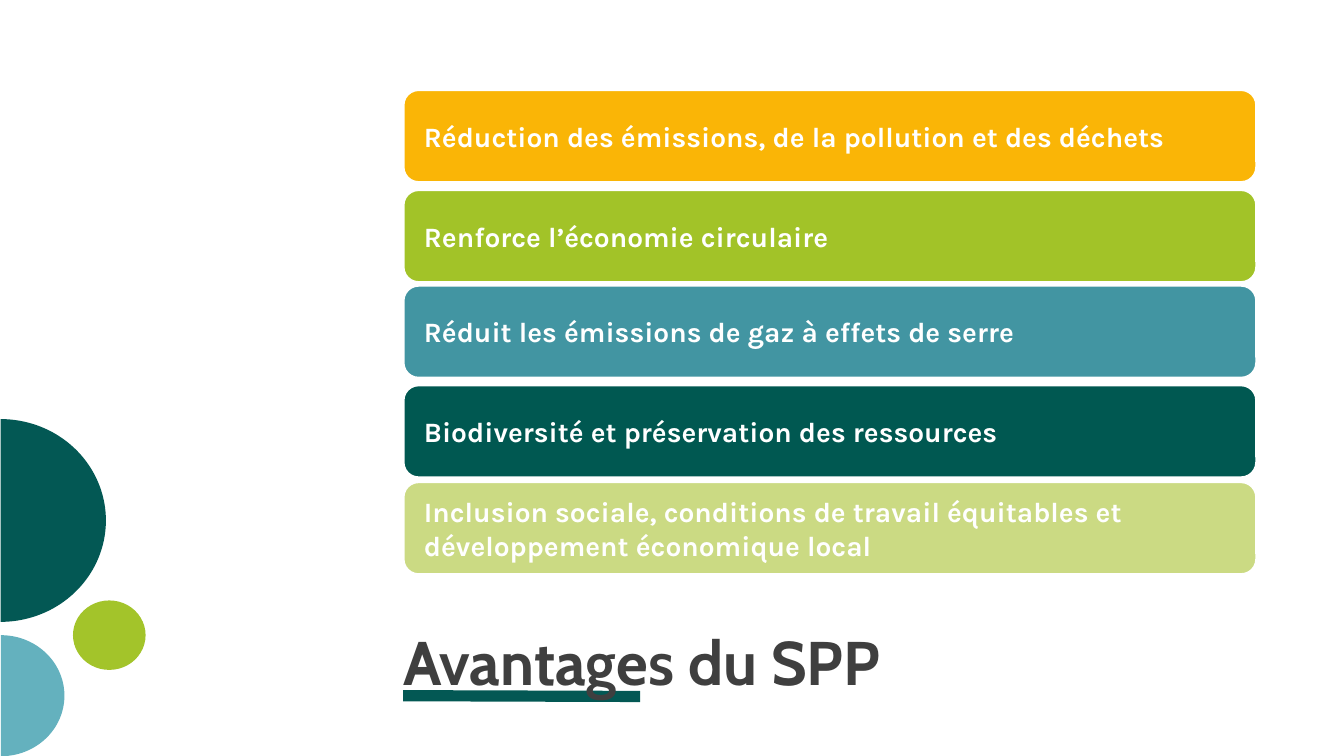
from lxml import etree
from pptx import Presentation
from pptx.dml.color import RGBColor
from pptx.enum.shapes import MSO_CONNECTOR, MSO_SHAPE as SHAPE
from pptx.enum.text import MSO_ANCHOR as ANCHOR, PP_ALIGN as ALIGN
from pptx.oxml.ns import qn
from pptx.util import Cm, Pt

TITLE = "Avantages du SPP"
# text, fill, top in cm
BENEFITS = [
    ("Réduction des émissions, de la pollution et des déchets", "FAB506", 2.26),
    ("Renforce l’économie circulaire", "A2C328", 4.78),
    ("Réduit les émissions de gaz à effets de serre", "4295A2", 7.19),
    ("Biodiversité et préservation des ressources", "005851", 9.7),
    ("Inclusion sociale, conditions de travail équitables et "
     "développement économique local", "CBDA83", 12.14),
]
# shape, fill, (left, top, width, height) in cm
CIRCLES = [
    (SHAPE.PIE, "035854", (-2.54, 10.46, 5.11, 5.31)),
    (SHAPE.PIE, "64B1BE", (-1.5, 15.93, 3.05, 3.2)),
    (SHAPE.OVAL, "A3C42A", (1.88, 15.09, 1.75, 1.83)),
]
LEFT = 10.16
BAR_W, BAR_H, BAR_INSET = 21.51, 2.34, 0.41


def rgb(color):
    return RGBColor.from_string(color)


def add_filled(s, kind, box, fill):
    sp = s.shapes.add_shape(kind, *map(Cm, box))
    sp.shadow.inherit = False
    sp.fill.solid()
    sp.fill.fore_color.rgb = rgb(fill)
    sp.line.fill.background()
    return sp


def set_text(sp, text, font, size, color, anchor, inset=0):
    tf = sp.text_frame
    tf.word_wrap = True
    tf.vertical_anchor = anchor
    tf.margin_left = tf.margin_right = Cm(inset)
    tf.margin_top = tf.margin_bottom = 0
    p = tf.paragraphs[0]
    p.text = text
    p.alignment = ALIGN.LEFT
    p.font.name, p.font.size, p.font.bold = font, Pt(size), True
    p.font.color.rgb = rgb(color)
    return p


prs = Presentation()
prs.slide_width, prs.slide_height = Cm(33.87), Cm(19.05)
s = prs.slides.add_slide(prs.slide_layouts[6])

underline = s.shapes.add_connector(
    MSO_CONNECTOR.STRAIGHT, Cm(LEFT), Cm(17.53), Cm(16.13), Cm(17.55))
underline.line.color.rgb = rgb("035854")
underline.line.width = Pt(8)
etree.SubElement(underline._element.spPr, qn("a:effectLst"))

for kind, fill, box in CIRCLES:
    circle = add_filled(s, kind, box, fill)
    circle.rotation = 270
    if kind == SHAPE.PIE:
        circle.adjustments[0] = 0
        circle.adjustments[1] = 108  # half a turn

title = s.shapes.add_textbox(Cm(LEFT), Cm(13.72), Cm(22.05), Cm(3.84))
p = set_text(title, TITLE, "Cabin", 44, "3F3F3F", ANCHOR.BOTTOM)
p.line_spacing = 0.8

for text, fill, top in BENEFITS:
    bar = add_filled(s, SHAPE.ROUNDED_RECTANGLE, (LEFT, top, BAR_W, BAR_H), fill)
    bar.line.color.rgb = rgb("FFFFFF")
    bar.line.width = Pt(2)
    set_text(bar, text, "Karla", 20, "FFFFFF", ANCHOR.MIDDLE, BAR_INSET)

prs.save("out.pptx")
